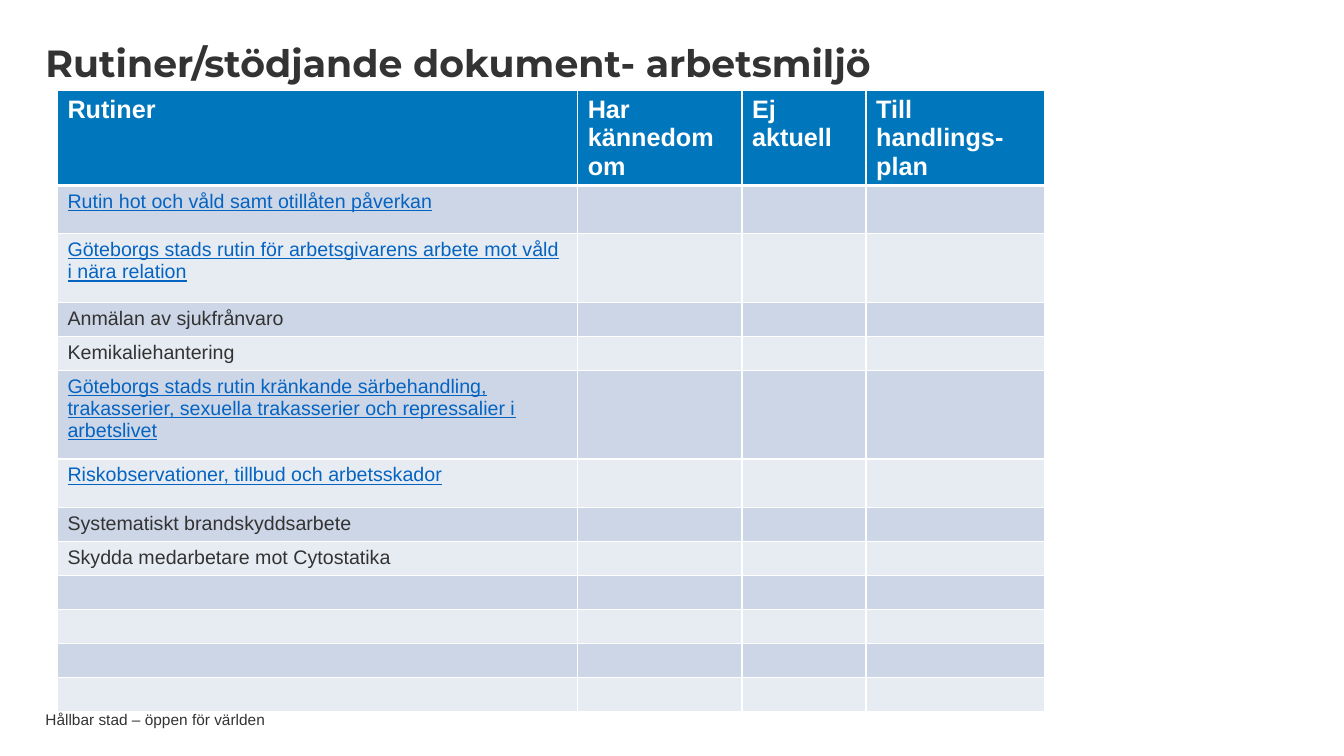
from lxml.etree import SubElement
from pptx import Presentation
from pptx.dml.color import RGBColor
from pptx.enum.text import MSO_ANCHOR
from pptx.oxml.ns import qn
from pptx.util import Inches, Pt

TITLE = "Rutiner/stödjande dokument- arbetsmiljö"
FOOTER = "Hållbar stad – öppen för världen"
HEADERS = ["Rutiner", "Har kännedom om", "Ej aktuell", "Till handlings-plan"]
ROUTINES = [
    ("Rutin hot och våld samt otillåten påverkan", True, 0.48),
    ("Göteborgs stads rutin för arbetsgivarens arbete mot våld i nära relation", True, 0.68),
    ("Anmälan av sjukfrånvaro", False, 0.32),
    ("Kemikaliehantering", False, 0.32),
    ("Göteborgs stads rutin kränkande särbehandling, trakasserier, "
     "sexuella trakasserier och repressalier i arbetslivet", True, 0.88),
    ("Riskobservationer, tillbud och arbetsskador", True, 0.48),
    ("Systematiskt brandskyddsarbete", False, 0.32),
    ("Skydda medarbetare mot Cytostatika", False, 0.32),
] + [("", False, 0.32)] * 4
COL_WIDTHS = [5.16, 1.63, 1.23, 1.77]
HEADER_HEIGHT = 0.93
LEFT = 0.45
BLUE, LINK, DARK, WHITE = "0077BC", "0563C1", "333333", "FFFFFF"
BANDS = ["CCD6E7", "E7ECF3"]


def color(value):
    return RGBColor.from_string(value)


def style(p, size, value, bold=False, underline=False, name="Arial"):
    f = p.font
    f.name, f.size, f.bold, f.underline = name, Pt(size), bold, underline
    f.color.rgb = color(value)


def set_frame(tf, anchor):
    tf.word_wrap = True
    tf.vertical_anchor = anchor
    tf.margin_left = tf.margin_right = tf.margin_top = tf.margin_bottom = 0


def set_borders(cell, bottom):
    tcPr = cell._tc.get_or_add_tcPr()
    for i, (side, width) in enumerate([("L", 1), ("R", 1), ("T", 1), ("B", bottom)]):
        ln = tcPr.makeelement(qn(f"a:ln{side}"), {"w": str(Pt(width))})
        fill = SubElement(ln, qn("a:solidFill"))
        SubElement(fill, qn("a:srgbClr"), val=WHITE)
        tcPr.insert(i, ln)


def fill_cell(cell, text, fill, size, value, bold=False, underline=False, bottom=1):
    cell.fill.solid()
    cell.fill.fore_color.rgb = color(fill)
    set_borders(cell, bottom)
    p = cell.text_frame.paragraphs[0]
    if text:
        p.text = text
        style(p, size, value, bold, underline)
    else:
        SubElement(p._p, qn("a:endParaRPr"), sz=str(size * 100))


def add_title(slide):
    sp = slide.shapes.title
    sp.left, sp.top, sp.width, sp.height = map(Inches, (LEFT, 0.44, 10.03, 0.81))
    set_frame(sp.text_frame, MSO_ANCHOR.TOP)
    p = sp.text_frame.paragraphs[0]
    p.text = TITLE
    p.line_spacing = 0.9
    p.alignment = 1
    style(p, 27, DARK, bold=True, name="Montserrat")


def add_routines(slide):
    heights = [HEADER_HEIGHT] + [height for _, _, height in ROUTINES]
    table = slide.shapes.add_table(
        len(heights), len(COL_WIDTHS), Inches(0.57), Inches(0.9),
        Inches(sum(COL_WIDTHS)), Inches(sum(heights))).table
    for col, width in zip(table.columns, COL_WIDTHS):
        col.width = Inches(width)
    for row, height in zip(table.rows, heights):
        row.height = Inches(height)
    for c, header in enumerate(HEADERS):
        fill_cell(table.cell(0, c), header, BLUE, 18, WHITE, bold=True, bottom=3)
        for r, (text, linked, _) in enumerate(ROUTINES):
            fill_cell(table.cell(r + 1, c), "" if c else text, BANDS[r % 2], 14,
                      LINK if linked else DARK, underline=linked)


def add_footer(slide):
    tf = slide.shapes.add_textbox(*map(Inches, (LEFT, 7.06, 9.45, 0.16))).text_frame
    set_frame(tf, MSO_ANCHOR.MIDDLE)
    p = tf.paragraphs[0]
    p.text = FOOTER
    style(p, 11, DARK)


def main():
    prs = Presentation()
    prs.slide_width, prs.slide_height = Inches(13.33), Inches(7.5)
    slide = prs.slides.add_slide(prs.slide_layouts[5])
    add_title(slide)
    add_routines(slide)
    add_footer(slide)
    prs.save("out.pptx")


if __name__ == "__main__":
    main()
